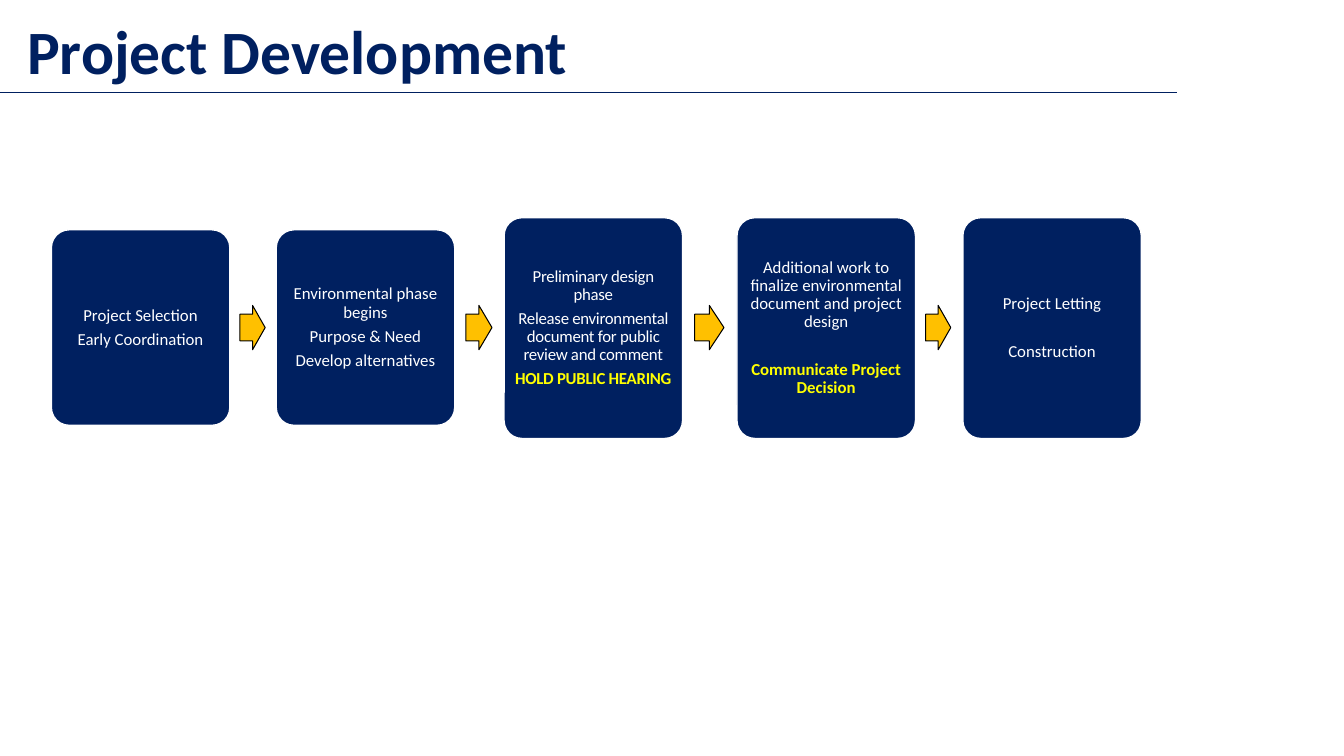
from dataclasses import dataclass

from pptx import Presentation
from pptx import util as u
from pptx.dml.color import RGBColor
from pptx.enum import shapes, text
from pptx.oxml import parse_xml
from pptx.oxml.ns import nsdecls

PX = 9144


@dataclass(frozen=True)
class Theme:
    """Colours, font and type sizes of the slide."""
    navy: str = "002060"
    gold: str = "FFC000"
    yellow: str = "FFFF00"
    white: str = "FFFFFF"
    black: str = "000000"
    font: str = "Calibri"
    title_size: int = 44
    body_size: int = 12
    line_spacing: float = 0.9
    gap: float = 4.2
    wide_gap: float = 21


THEME = Theme()
CARD_WIDTH = 177
MIDDLE = 325

STAGES = [
    (51, 194, 0, THEME.gap, ["Project Selection", "Early Coordination"], None),
    (274, 194, 0, THEME.gap,
     ["Environmental phase begins", "Purpose & Need", "Develop alternatives"], None),
    (500, 219, -20, THEME.gap,
     ["Preliminary design phase",
      "Release environmental document for public review and comment"],
     "HOLD PUBLIC HEARING"),
    (731, 219, 0, THEME.wide_gap,
     ["Additional work to finalize environmental document and project design"],
     "Communicate Project Decision"),
    (955, 219, 0, THEME.wide_gap, ["Project Letting", "Construction"], None),
]


def px(*lengths):
    """Turn whole pixels into EMU."""
    return [u.Emu(round(n) * PX) for n in lengths]


def rgb(value):
    """Return a colour from its hex value."""
    return RGBColor.from_string(value)


def add_run(p, words, size, colour, bold=False):
    """Add one formatted run to a paragraph."""
    r = p.add_run()
    r.text = words
    r.font.name = THEME.font
    r.font.size = u.Pt(size)
    r.font.bold = bold
    r.font.color.rgb = rgb(colour)
    return r


def set_frame(tf, anchor, side, top):
    """Set wrapping, anchor and insets of a text frame."""
    tf.word_wrap = True
    tf.vertical_anchor = anchor
    tf.margin_left, tf.margin_right, tf.margin_top, tf.margin_bottom = px(
        side, side, top, top)


def add_block(s, kind, box, fill, line, weight, adjustments):
    """Add a filled, outlined preset shape without a shadow."""
    sp = s.shapes.add_shape(kind, *px(*box))
    sp.shadow.inherit = False
    sp.fill.solid()
    sp.fill.fore_color.rgb = rgb(fill)
    sp.line.color.rgb = rgb(line)
    sp.line.width = u.Pt(weight)
    for i, value in enumerate(adjustments):
        sp.adjustments[i] = value
    return sp


def add_header(s, left, top, width, height):
    """Place the title and the rule along its lower edge."""
    rule = s.shapes.add_connector(
        shapes.MSO_CONNECTOR.STRAIGHT,
        *px(left, top + height, left + width, top + height))
    rule.line.color.rgb = rgb(THEME.navy)
    rule.line.width = u.Pt(0.5)
    rule._element.spPr.append(parse_xml(f"<a:effectLst {nsdecls('a')}/>"))
    title = s.shapes.add_textbox(*px(left + 17, top, 1300, height))
    set_frame(title.text_frame, text.MSO_ANCHOR.BOTTOM, 10, 5)
    p = title.text_frame.paragraphs[0]
    p.line_spacing = THEME.line_spacing
    add_run(p, "Project Development", THEME.title_size, THEME.navy, True)


def add_card(s, left, top, width, height, spacing, gap, lines, milestone):
    """Place one stage card with its steps and optional milestone."""
    sp = add_block(s, shapes.MSO_SHAPE.ROUNDED_RECTANGLE,
                   (left, top, width, height), THEME.navy, THEME.white, 1, [0.1])
    tf = sp.text_frame
    set_frame(tf, text.MSO_ANCHOR.MIDDLE, 5, 5)
    steps = [(line, THEME.white, False) for line in lines]
    if milestone:
        steps.append((milestone, THEME.yellow, True))
    for i, (words, colour, bold) in enumerate(steps):
        p = tf.add_paragraph() if i else tf.paragraphs[0]
        p.alignment = text.PP_ALIGN.CENTER
        p.line_spacing = THEME.line_spacing
        if i:
            p.space_before = u.Pt(gap)
        r = add_run(p, words, THEME.body_size, colour, bold)
        if spacing:
            r.font._element.set("spc", str(spacing))


def add_arrow(s, left, middle, gap):
    """Place an arrow in the gap that starts at left."""
    add_block(s, shapes.MSO_SHAPE.RIGHT_ARROW,
              (left + 0.22 * gap, middle - 22, 0.54 * gap, 44),
              THEME.gold, THEME.black, 0.75, [0.6, 0.5])


def add_process(s, middle, card_width):
    """Place the stage cards in a row with arrows between them."""
    for i, (left, height, *content) in enumerate(STAGES):
        add_card(s, left, middle - height / 2, card_width, height, *content)
        if i + 1 < len(STAGES):
            right = left + card_width
            add_arrow(s, right, middle, STAGES[i + 1][0] - right)


def main():
    """Build and save the slide."""
    prs = Presentation()
    prs.slide_width, prs.slide_height = px(1333, 750)
    s = prs.slides.add_slide(prs.slide_layouts[6])
    add_header(s, 0, 0, 1167, 92)
    add_process(s, MIDDLE, CARD_WIDTH)
    prs.save("out.pptx")


if __name__ == "__main__":
    main()
